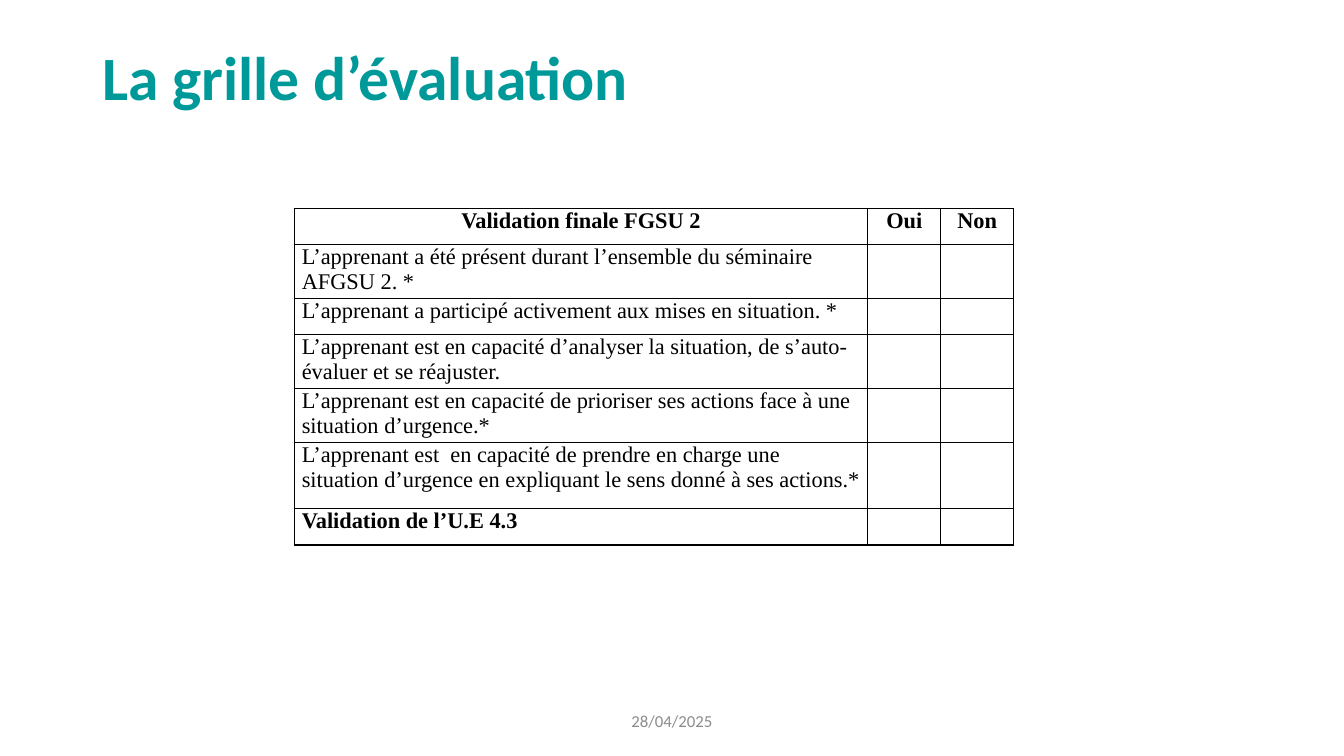
"""Build the evaluation grid slide."""
import pptx
import pptx.dml.color
import pptx.enum.text
import pptx.oxml
import pptx.oxml.ns
import pptx.util

Pt = pptx.util.Pt
ALIGN = pptx.enum.text.PP_ALIGN
ANCHOR = pptx.enum.text.MSO_ANCHOR

HEADINGS = ["Validation finale FGSU 2", "Oui", "Non"]
CRITERIA = [
    "L’apprenant a été présent durant l’ensemble du séminaire AFGSU 2. *",
    "L’apprenant a participé activement aux mises en situation. *",
    "L’apprenant est en capacité d’analyser la situation, de s’auto-évaluer et se réajuster.",
    "L’apprenant est en capacité de prioriser ses actions face à une situation d’urgence.*",
    "L’apprenant est  en capacité de prendre en charge une situation d’urgence "
    "en expliquant le sens donné à ses actions.*",
]
CONCLUSION = "Validation de l’U.E 4.3"
COLUMN_WIDTHS = [409.7, 52.1, 52.1]
ROW_HEIGHTS = [25.9] * 5 + [47.5, 25.9]


def color(value):
    """Return the colour for a hex string."""
    return pptx.dml.color.RGBColor.from_string(value)


def write(paragraph, text, size, font, fill, bold=False, align=ALIGN.LEFT):
    """Add one formatted run to a paragraph."""
    paragraph.alignment = align
    run = paragraph.add_run()
    run.text = text
    run.font.size = Pt(size)
    run.font.name = font
    run.font.bold = bold
    run.font.color.rgb = color(fill)


def add_label(slide, box, text, size, fill, bold=False, align=ALIGN.LEFT, spacing=1.0):
    """Place a vertically centred line of text in a box."""
    shape = slide.shapes.add_textbox(*(Pt(length) for length in box))
    frame = shape.text_frame
    frame.word_wrap = True
    frame.vertical_anchor = ANCHOR.MIDDLE
    paragraph = frame.paragraphs[0]
    paragraph.line_spacing = spacing
    write(paragraph, text, size, "Calibri", fill, bold, align)


def format_cell(cell):
    """Give a cell its margins, thin black borders and no fill."""
    cell.margin_left = cell.margin_right = Pt(5.4)
    cell.margin_top = cell.margin_bottom = 0
    properties = cell._tc.get_or_add_tcPr()
    for side in ("lnL", "lnR", "lnT", "lnB"):
        properties.append(pptx.oxml.parse_xml(
            f'<a:{side} {pptx.oxml.ns.nsdecls("a")} w="{Pt(1)}"><a:solidFill>'
            f'<a:srgbClr val="000000"/></a:solidFill></a:{side}>'))
    cell.fill.background()


def add_grid(slide, left, top):
    """Place the evaluation table with its top left corner at a point."""
    rows = [HEADINGS] + [[text, "", ""] for text in CRITERIA + [CONCLUSION]]
    table = slide.shapes.add_table(
        len(rows), len(HEADINGS), Pt(left), Pt(top),
        Pt(sum(COLUMN_WIDTHS)), Pt(sum(ROW_HEIGHTS))).table
    table.first_row = table.horz_banding = False
    for column, width in zip(table.columns, COLUMN_WIDTHS):
        column.width = Pt(width)
    for row_index, texts in enumerate(rows):
        table.rows[row_index].height = Pt(ROW_HEIGHTS[row_index])
        align = ALIGN.CENTER if row_index == 0 else ALIGN.LEFT
        bold = row_index in (0, len(rows) - 1)
        for column_index, text in enumerate(texts):
            cell = table.cell(row_index, column_index)
            format_cell(cell)
            if text:
                write(cell.text_frame.paragraphs[0], text, 16,
                      "Times New Roman", "000000", bold, align)


def main():
    """Build and save the presentation."""
    presentation = pptx.Presentation()
    presentation.slide_width, presentation.slide_height = Pt(960), Pt(540)
    slide = presentation.slides.add_slide(presentation.slide_layouts[6])
    add_label(slide, (66, 28.8, 828, 56.9), "La grille d’évaluation", 44,
              "009999", bold=True, spacing=0.9)
    add_grid(slide, 210.2, 149)
    add_label(slide, (318, 500.5, 324, 28.8), "28/04/2025", 12, "8C8C8C",
              align=ALIGN.CENTER)
    presentation.save("out.pptx")


if __name__ == "__main__":
    main()
